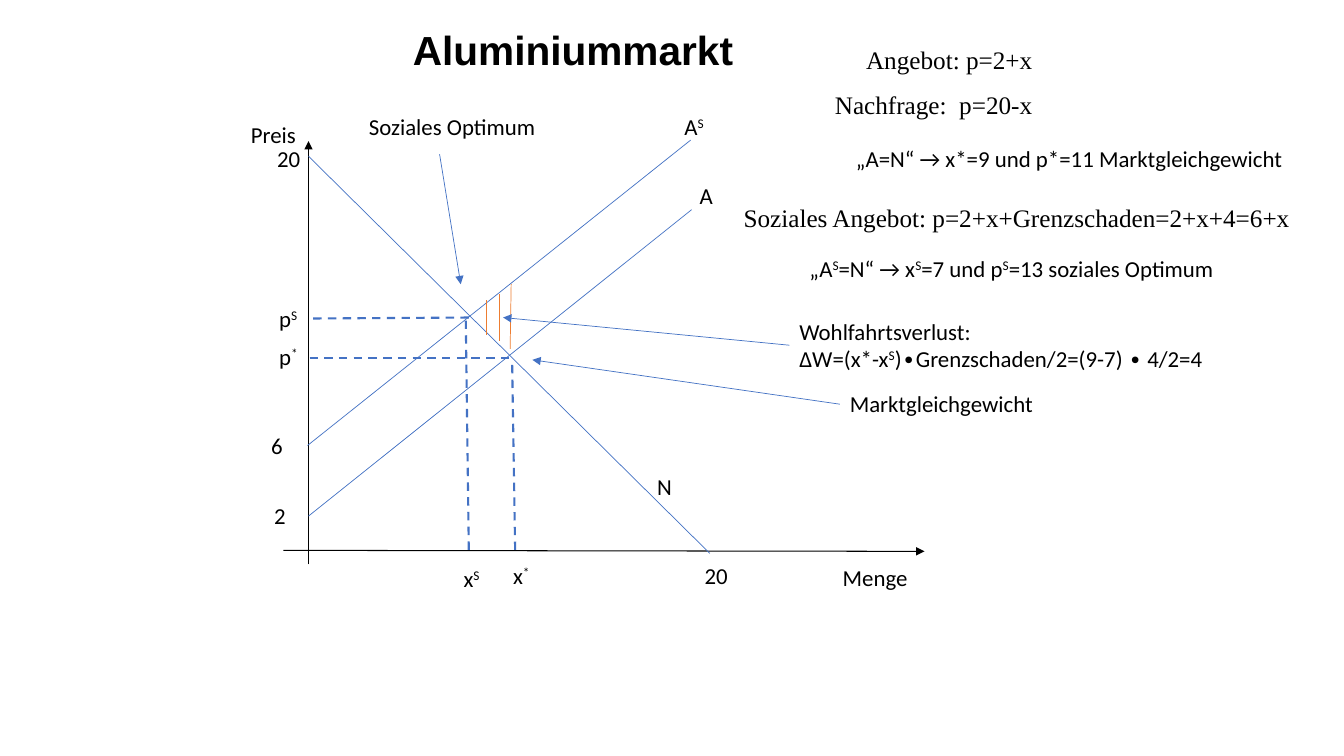
from lxml.etree import SubElement
from pptx import Presentation
from pptx.dml.color import RGBColor
from pptx.enum.dml import MSO_LINE_DASH_STYLE as DASH
from pptx.enum.shapes import MSO_CONNECTOR as CONNECTOR
from pptx.enum.text import MSO_ANCHOR as ANCHOR, MSO_AUTO_SIZE as AUTO_SIZE, PP_ALIGN as ALIGN
from pptx.oxml.ns import qn
from pptx.util import Inches, Pt

BLACK = RGBColor(0x00, 0x00, 0x00)
BLUE = RGBColor(0x44, 0x72, 0xC4)
ORANGE = RGBColor(0xED, 0x7D, 0x31)
WIDTH, HEIGHT = Inches(13.33), Inches(7.5)
COLUMNS, ROWS = 133.3, 75
LABEL_HEIGHT, FORMULA_HEIGHT = 3.8, 4
LEFT_SIDE = 1

AXIS_LABELS = [
    ("Preis", 23.9, 11.5, 6.5), ("Menge", 82.6, 55.4, 8.5),
    ("20", 26.5, 13.9, 4.3), ("20", 68.9, 55.2, 4.3),
    ("6", 25.9, 42.3, 3.2), ("2", 26.2, 49.3, 3.2),
    ("p|S", 26.7, 29.7, 3.9), ("p|*", 26.7, 33.5, 4),
    ("x|S", 45, 55.5, 3.7), ("x|*", 49.9, 55.2, 3.8),
]
CURVE_LABELS = [
    ("N", 64.2, 46.4, 3.5), ("A", 68.4, 17.5, 3.4), ("A|S", 66.9, 10.7, 4.1),
    ("Soziales Optimum", 35.6, 10.7, 18.7),
    ("„A=N“ → x*=9 und p*=11 Marktgleichgewicht", 83.9, 13.9, 44.8),
]
FORMULAS = [
    ("Angebot: p=2+x", 84.8, 3.9, 18.7),
    ("Nachfrage:  p=20-x", 81.7, 8.4, 21.8),
    ("Soziales Angebot: p=2+x+Grenzschaden=2+x+4=6+x", 72.5, 19.6, 56.7),
]
AXES = [((30.6, 56), (30.6, 14)), ((28.1, 54.6), (91.7, 54.7))]
CURVES = [
    ((30.6, 15.5), (70.4, 54.9)),
    ((30.6, 51.2), (68.6, 20.8)),
    ((30.5, 44.2), (68.5, 13.9)),
]
WELFARE_HATCHING = [
    ((50.7, 28.2), (50.6, 34.6)),
    ((49.5, 29.2), (49.5, 33.8)),
    ((48.2, 29.8), (48.2, 33.2)),
]
GUIDES = [
    ((46.2, 31.8), (46.5, 54.9)), ((50.8, 36.2), (51.1, 54.9)),
    ((30.7, 35.5), (50.8, 35.5)), ((46.5, 31.5), (30.7, 31.6)),
]


def across(columns):
    return round(WIDTH * columns / COLUMNS)


def down(rows):
    return round(HEIGHT * rows / ROWS)


def style_font(font, name, size, bold=False):
    font.name, font.size, font.bold = name, Pt(size), bold
    font.color.rgb = BLACK


def fill_paragraph(paragraph, text, name, size):
    for index, part in enumerate(text.split("|")):
        run = paragraph.add_run()
        run.text = part
        style_font(run.font, name, size)
        if index % 2:
            run.font._element.set("baseline", "30000")


def add_text(slide, text, left, top, width, height=LABEL_HEIGHT,
             name="Calibri", size=16.3, align=ALIGN.LEFT, wrap=False):
    box = slide.shapes.add_textbox(across(left), down(top), across(width), down(height))
    frame = box.text_frame
    frame.word_wrap = wrap
    frame.auto_size = AUTO_SIZE.SHAPE_TO_FIT_TEXT
    for index, line in enumerate(text.split("\n")):
        paragraph = frame.add_paragraph() if index else frame.paragraphs[0]
        paragraph.alignment = align
        fill_paragraph(paragraph, line, name, size)
    return box


def add_line(slide, start, end, color=BLUE, weight=0.5, dashed=False, arrow=False):
    connector = slide.shapes.add_connector(
        CONNECTOR.STRAIGHT, across(start[0]), down(start[1]), across(end[0]), down(end[1]))
    connector.line.color.rgb = color
    connector.line.width = Pt(weight)
    if dashed:
        connector.line.dash_style = DASH.DASH
    if arrow:
        SubElement(connector.line._get_or_add_ln(), qn("a:tailEnd"), type="triangle")
    SubElement(connector._element.spPr, qn("a:effectLst"))
    return connector


def add_callout(slide, text, left, top, width, height, target):
    box = add_text(slide, text, left, top, width, height, wrap=True)
    arrow = add_line(slide, (left, top + height / 2), target, arrow=True)
    arrow.begin_connect(box, LEFT_SIDE)


def format_title(slide):
    title = slide.shapes.title
    title.left, title.top = across(15.3), down(0.8)
    title.width, title.height = across(83.1), down(8.1)
    frame = title.text_frame
    frame.text = "Aluminiummarkt"
    frame.vertical_anchor = ANCHOR.MIDDLE
    paragraph = frame.paragraphs[0]
    paragraph.alignment = ALIGN.CENTER
    style_font(paragraph.runs[0].font, "Arial", 29, bold=True)


def main():
    presentation = Presentation()
    presentation.slide_width, presentation.slide_height = WIDTH, HEIGHT
    slide = presentation.slides.add_slide(presentation.slide_layouts[5])
    format_title(slide)

    for start, end in AXES:
        add_line(slide, start, end, BLACK, 0.75, arrow=True)
    for start, end in CURVES:
        add_line(slide, start, end)
    for start, end in WELFARE_HATCHING:
        add_line(slide, start, end, ORANGE)
    for start, end in GUIDES:
        add_line(slide, start, end, weight=1.5, dashed=True)
    add_line(slide, (43.6, 15.3), (45.7, 28.2), arrow=True)

    for label in AXIS_LABELS + CURVE_LABELS:
        add_text(slide, *label)
    for formula in FORMULAS:
        add_text(slide, *formula, FORMULA_HEIGHT, "Times New Roman", 18, ALIGN.CENTER)
    add_text(slide, "„A|S|=N“ → x|S|=7 und p|S|=13 soziales Optimum",
             79.3, 24.8, 45.2, wrap=True)
    add_callout(slide, "Wohlfahrtsverlust:\n∆W=(x*-x|S|)∙Grenzschaden/2=(9-7) ∙ 4/2=4",
                78.3, 31, 55, 6.5, (49.9, 31.5))
    add_callout(slide, "Marktgleichgewicht", 83.3, 38.2, 27, LABEL_HEIGHT, (52.8, 35.7))

    presentation.save("out.pptx")


if __name__ == "__main__":
    main()
